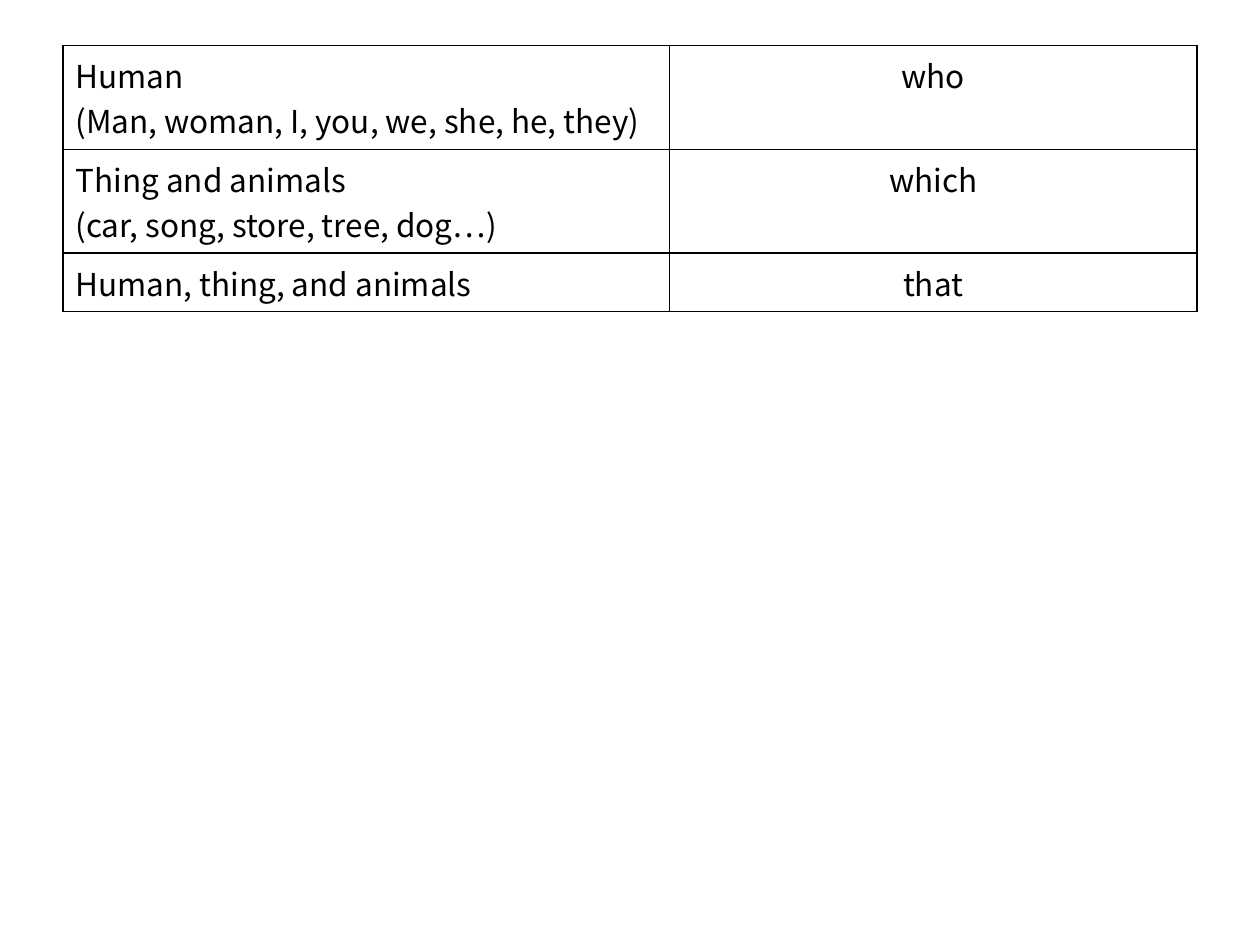
from dataclasses import dataclass

from lxml.etree import SubElement
from pptx import Presentation
from pptx.dml.color import RGBColor
from pptx.enum.text import PP_ALIGN as Align
from pptx.oxml.ns import qn
from pptx.util import Pt


@dataclass(frozen=True)
class Theme:
    font: str = "Noto Sans CJK KR"
    text_size: float = 18
    ink: str = "000000"
    border_width: float = 1


PRONOUNS = [
    ("Human\n(Man, woman, I, you, we, she, he, they)", "who"),
    ("Thing and animals\n(car, song, store, tree, dog…)", "which"),
    ("Human, thing, and animals", "that"),
]
COLUMN_WIDTHS = (346.5, 301.5)
COLUMN_ALIGNMENTS = (Align.LEFT, Align.CENTER)
ROW_HEIGHT = 29.5


def write_text(text_frame, text, *, font, size, color, align):
    """Write one paragraph for each line of text."""
    text_frame.text = text
    for paragraph in text_frame.paragraphs:
        paragraph.alignment = align
        for run in paragraph.runs:
            run.font.name = font
            run.font.size = Pt(size)
            run.font.color.rgb = RGBColor.from_string(color)
            east_asian = SubElement(run.font._element, qn("a:ea"))
            east_asian.set("typeface", font)


def draw_borders(cell, *, color, width):
    properties = cell._tc.get_or_add_tcPr()
    for position, side in enumerate(("lnL", "lnR", "lnT", "lnB")):
        line = properties.makeelement(qn(f"a:{side}"), {"w": str(Pt(width))})
        fill = SubElement(line, qn("a:solidFill"))
        SubElement(fill, qn("a:srgbClr"), val=color)
        properties.insert(position, line)


class SlideBuilder:
    def __init__(self, slide, theme):
        self.slide = slide
        self.theme = theme

    def table(self, rows, left, top, height, widths, alignments, row_height):
        frame = self.slide.shapes.add_table(
            len(rows), len(widths), Pt(left), Pt(top), Pt(sum(widths)), Pt(height)
        )
        table = frame.table
        table.first_row = False
        table.horz_banding = False
        for column, width in zip(table.columns, widths):
            column.width = Pt(width)
        for row, texts in zip(table.rows, rows):
            row.height = Pt(row_height)
            for cell, text, align in zip(row.cells, texts, alignments):
                self.cell(cell, text, align)
        frame.height = Pt(height)

    def cell(self, cell, text, align):
        theme = self.theme
        cell.fill.background()
        draw_borders(cell, color=theme.ink, width=theme.border_width)
        write_text(cell.text_frame, text, font=theme.font, size=theme.text_size,
                   color=theme.ink, align=align)


def main():
    presentation = Presentation()
    presentation.slide_width, presentation.slide_height = Pt(720), Pt(540)
    blank_layout = presentation.slide_layouts[6]
    builder = SlideBuilder(presentation.slides.add_slide(blank_layout), Theme())
    builder.table(PRONOUNS, left=36, top=26, height=130.3, widths=COLUMN_WIDTHS,
                  alignments=COLUMN_ALIGNMENTS, row_height=ROW_HEIGHT)
    presentation.save("out.pptx")


if __name__ == "__main__":
    main()
